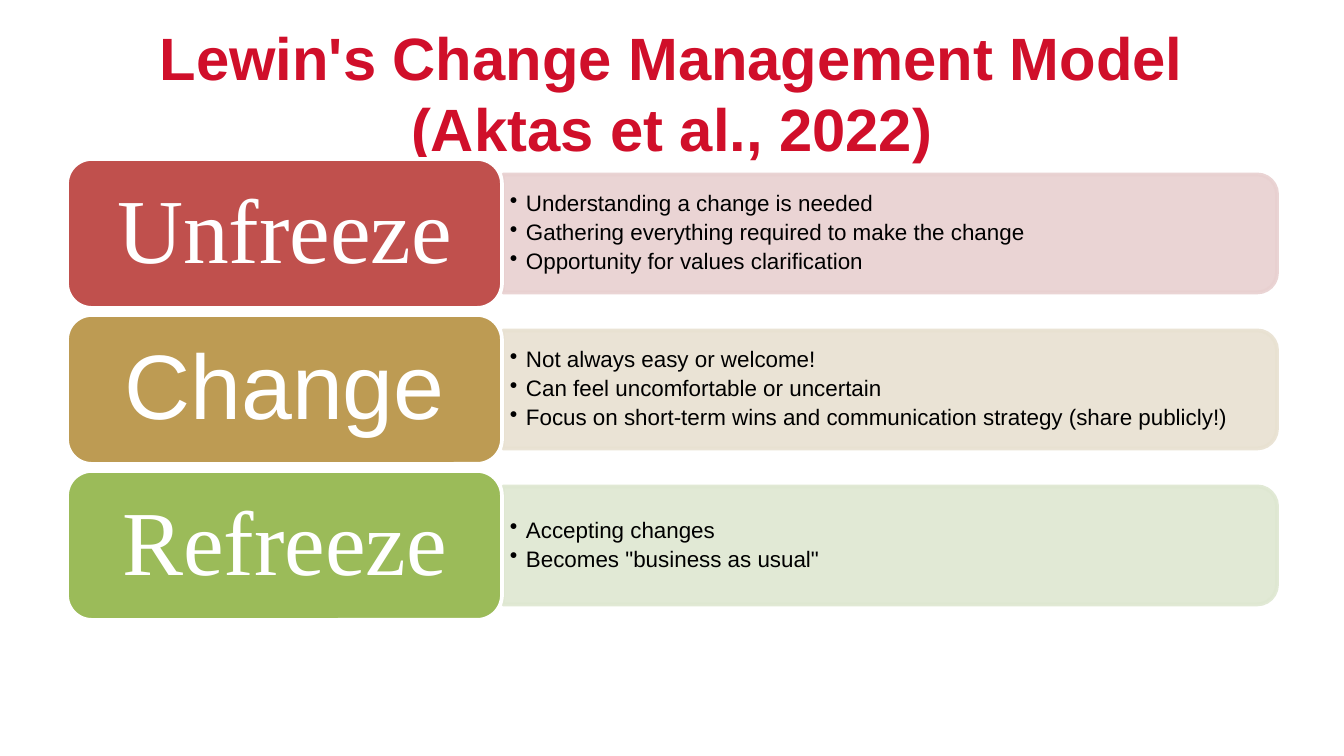
"""Build the slide on Lewin's change management model."""
import pptx
import pptx.dml.color
import pptx.enum.shapes
import pptx.enum.text
import pptx.oxml.ns
import pptx.util
from lxml import etree

RGBColor = pptx.dml.color.RGBColor
SHAPE = pptx.enum.shapes.MSO_SHAPE
ALIGN = pptx.enum.text.PP_ALIGN
MIDDLE = pptx.enum.text.MSO_ANCHOR.MIDDLE
NO_FIT = pptx.enum.text.MSO_AUTO_SIZE.NONE
qn = pptx.oxml.ns.qn

WHITE = RGBColor(0xFF, 0xFF, 0xFF)
BLACK = RGBColor(0x00, 0x00, 0x00)
CRIMSON = RGBColor(0xD0, 0x0F, 0x2A)
RED = RGBColor(0xC0, 0x50, 0x4D)
PALE_RED = RGBColor(0xE8, 0xD0, 0xD0)
GOLD = RGBColor(0xBD, 0x9B, 0x53)
PALE_GOLD = RGBColor(0xE8, 0xE1, 0xD1)
GREEN = RGBColor(0x9B, 0xBB, 0x59)
PALE_GREEN = RGBColor(0xDE, 0xE7, 0xD1)

SLIDE_WIDTH, SLIDE_HEIGHT = 1344, 756
EMU_PER_PX = 9144000 / SLIDE_WIDTH
STAGE_LEFT, STAGE_TOP, STAGE_PITCH = 67, 159, 156
TILE_WIDTH, TILE_HEIGHT = 435, 149
PANEL_LEFT, PANEL_WIDTH, PANEL_HEIGHT = 503, 774, 118
POINTS_HEIGHT, BULLET_INDENT = 107, 16

STAGES = [
    ("Unfreeze", "Times New Roman", RED, PALE_RED, [
        "Understanding a change is needed",
        "Gathering everything required to make the change",
        "Opportunity for values clarification",
    ]),
    ("Change", "Arial", GOLD, PALE_GOLD, [
        "Not always easy or welcome!",
        "Can feel uncomfortable or uncertain",
        "Focus on short-term wins and communication strategy (share publicly!)",
    ]),
    ("Refreeze", "Times New Roman", GREEN, PALE_GREEN, [
        "Accepting changes",
        'Becomes "business as usual"',
    ]),
]


def px(length):
    """Turn pixels into EMU."""
    return pptx.util.Emu(round(length * EMU_PER_PX))


def prepare_frame(frame, inset_x, inset_y):
    """Wrap the text, centre it vertically and set its insets."""
    frame.word_wrap = True
    frame.auto_size = NO_FIT
    frame.vertical_anchor = MIDDLE
    frame.margin_left = frame.margin_right = px(inset_x)
    frame.margin_top = frame.margin_bottom = px(inset_y)


def add_run(paragraph, text, font_name, size, color, bold=False):
    """Add one formatted run."""
    run = paragraph.add_run()
    run.text = text
    run.font.name = font_name
    run.font.size = pptx.util.Pt(size)
    run.font.color.rgb = color
    run.font.bold = bold


def add_box(slide, preset, box, fill, line):
    """Add a filled preset shape with a two-point outline."""
    shape = slide.shapes.add_shape(preset, *map(px, box))
    shape.shadow.inherit = False
    shape.fill.solid()
    shape.fill.fore_color.rgb = fill
    shape.line.color.rgb = line
    shape.line.width = pptx.util.Pt(2)
    return shape


def add_title(slide, text):
    """Place and format the title."""
    title = slide.shapes.title
    title.left, title.top, title.width, title.height = map(px, (67, 62, 1210, 60))
    prepare_frame(title.text_frame, 13, 7)
    heading = title.text_frame.paragraphs[0]
    heading.alignment = ALIGN.CENTER
    add_run(heading, text, "Arial", 32, CRIMSON, bold=True)


def add_panel(slide, middle, color):
    """Add the translucent panel, turned so its round corners face right."""
    left = PANEL_LEFT + (PANEL_WIDTH - PANEL_HEIGHT) / 2
    box = (left, middle - PANEL_WIDTH / 2, PANEL_HEIGHT, PANEL_WIDTH)
    panel = add_box(slide, SHAPE.ROUND_2_SAME_RECTANGLE, box, color, color)
    panel.rotation = 90
    for tint in panel._element.spPr.iter(qn("a:srgbClr")):
        etree.SubElement(tint, qn("a:alpha"), val="90000")


def add_points(slide, middle, points):
    """Add the bulleted points over a panel."""
    box = (PANEL_LEFT, middle - POINTS_HEIGHT / 2, PANEL_WIDTH - 5, POINTS_HEIGHT)
    frame = slide.shapes.add_textbox(*map(px, box)).text_frame
    prepare_frame(frame, 7, 4)
    for index, point in enumerate(points):
        paragraph = frame.add_paragraph() if index else frame.paragraphs[0]
        properties = paragraph._p.get_or_add_pPr()
        properties.set("marL", str(px(BULLET_INDENT)))
        properties.set("indent", str(-px(BULLET_INDENT)))
        etree.SubElement(properties, qn("a:buChar"), char="•")
        paragraph.level = 1
        paragraph.alignment = ALIGN.LEFT
        paragraph.line_spacing = 0.9
        paragraph.space_after = pptx.util.Pt(2.5)
        add_run(paragraph, point, "Arial", 12, BLACK)


def add_tile(slide, top, name, font_name, color):
    """Add the rounded tile that names a stage."""
    box = (STAGE_LEFT, top, TILE_WIDTH, TILE_HEIGHT)
    tile = add_box(slide, SHAPE.ROUNDED_RECTANGLE, box, color, WHITE)
    prepare_frame(tile.text_frame, 27, 13)
    label = tile.text_frame.paragraphs[0]
    label.alignment = ALIGN.CENTER
    label.line_spacing = 0.9
    add_run(label, name, font_name, 49, WHITE)


def main():
    """Build and save the slide."""
    deck = pptx.Presentation()
    deck.slide_width, deck.slide_height = px(SLIDE_WIDTH), px(SLIDE_HEIGHT)
    slide = deck.slides.add_slide(deck.slide_layouts.get_by_name("Title Only"))
    add_title(slide, "Lewin's Change Management Model (Aktas et al., 2022)")
    for index, (name, font_name, color, pale, points) in enumerate(STAGES):
        top = STAGE_TOP + index * STAGE_PITCH
        middle = top + TILE_HEIGHT / 2
        add_panel(slide, middle, pale)
        add_points(slide, middle, points)
        add_tile(slide, top, name, font_name, color)
    deck.save("out.pptx")


if __name__ == "__main__":
    main()
